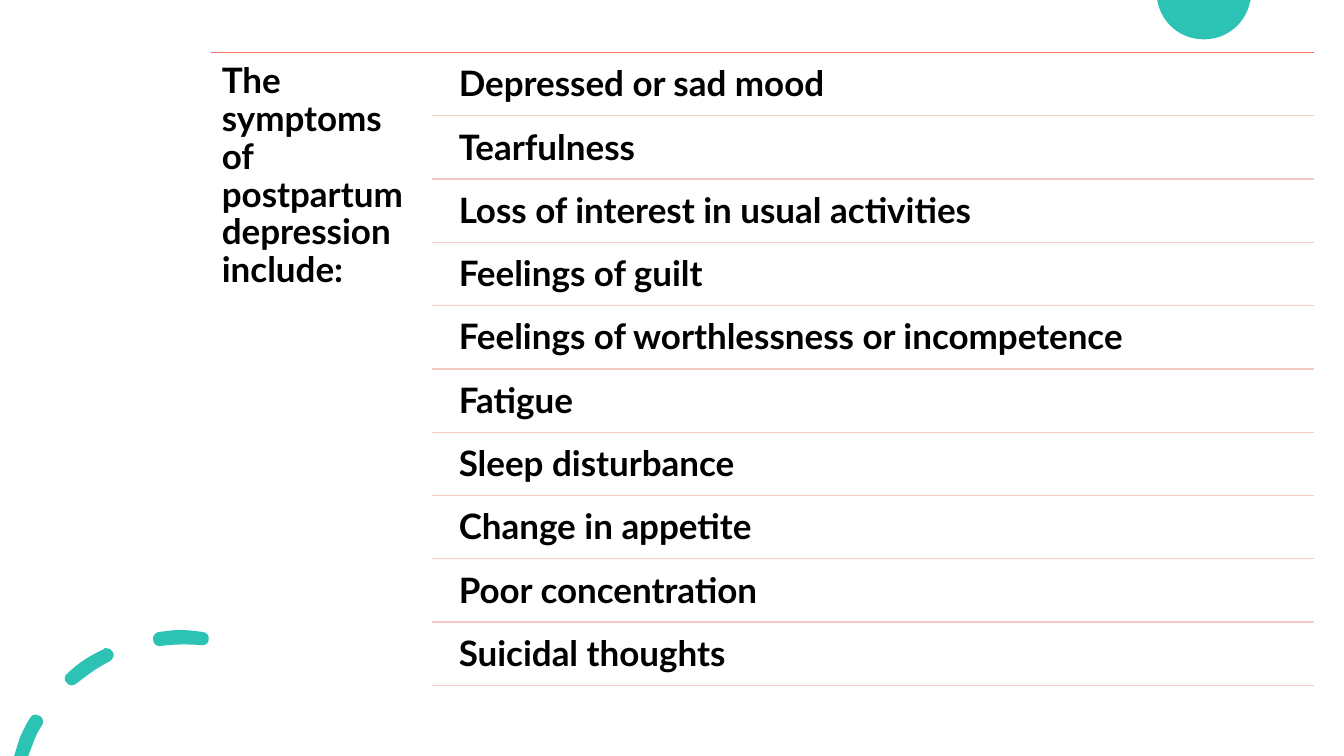
from lxml.etree import SubElement
from pptx import Presentation
from pptx.dml.color import RGBColor
from pptx.enum.shapes import MSO_CONNECTOR
from pptx.enum.text import MSO_ANCHOR
from pptx.oxml.ns import qn
from pptx.util import Inches, Pt

# Content
TITLE = "The symptoms of postpartum depression include:"
SIGNS = [
    "Depressed or sad mood",
    "Tearfulness",
    "Loss of interest in usual activities",
    "Feelings of guilt",
    "Feelings of worthlessness or incompetence",
    "Fatigue",
    "Sleep disturbance",
    "Change in appetite",
    "Poor concentration",
    "Suicidal thoughts",
]
TEAL, CORAL, PINK, BLACK = "2CC3B4", "EE7661", "F7CAC5", "000000"

# Outlines: a start point, then segments of one point (line) or three (curve)
DISC = [
    [(11.48, 0), (12.41, 0), (12.4, .01), (12.36, .23, 12.17, .39, 11.94, .39),
     (11.71, .39, 11.52, .23, 11.48, .01)],
]
DASHES = [
    [(.36, 7.09), (.34, 7.08, .31, 7.1, .3, 7.12),
     (.26, 7.18, .23, 7.25, .2, 7.31), (.14, 7.5), (.28, 7.5), (.33, 7.37),
     (.35, 7.31, .38, 7.25, .42, 7.19), (.44, 7.16, .42, 7.11, .39, 7.1),
     (.38, 7.09, .37, 7.09, .36, 7.09)],
    [(1.05, 6.43), (1.04, 6.43, 1.03, 6.43, 1.03, 6.44),
     (.9, 6.5, .77, 6.58, .67, 6.68), (.64, 6.7, .63, 6.75, .66, 6.77),
     (.67, 6.79, .69, 6.8, .71, 6.8), (.73, 6.8, .74, 6.79, .76, 6.78),
     (.86, 6.7, .97, 6.62, 1.09, 6.56), (1.12, 6.54, 1.14, 6.5, 1.12, 6.47),
     (1.11, 6.44, 1.08, 6.43, 1.05, 6.43)],
    [(1.79, 6.25), (1.72, 6.25, 1.65, 6.26, 1.58, 6.27),
     (1.54, 6.27, 1.51, 6.31, 1.52, 6.35), (1.52, 6.38, 1.55, 6.41, 1.58, 6.41),
     (1.73, 6.39, 1.86, 6.39, 1.99, 6.4), (2.03, 6.41, 2.07, 6.38, 2.07, 6.35),
     (2.08, 6.31, 2.05, 6.27, 2.01, 6.27), (1.94, 6.26, 1.86, 6.25, 1.79, 6.25)],
]

# Grid, in inches
LEFT, RIGHT, TOP, END = 2.09, 13.03, .52, 6.8
RULE, TEXT = 4.28, 4.44
ROW = (END - TOP) / len(SIGNS)
GAP, INSET = .03, .11

deck = Presentation()
deck.slide_width, deck.slide_height = Inches(13.33), Inches(7.5)
slide = deck.slides.add_slide(deck.slide_layouts[6])
shapes = slide.shapes


def paint(color, code):
    color.rgb = RGBColor.from_string(code)


def blob(loops):
    # Straight outline through the end points
    pen = None
    for start, *parts in loops:
        x, y = map(Inches, start)
        if pen is None:
            pen = shapes.build_freeform(x, y, scale=1.0)
        else:
            pen.move_to(x, y)
        ends = [tuple(map(Inches, part[-2:])) for part in parts]
        pen.add_line_segments(ends, close=True)
    shape = pen.convert_to_shape()

    # Bend the segments that have control points
    sides = list(shape._element.iter(qn("a:lnTo")))
    parts = [part for loop in loops for part in loop[1:]]
    for side, part in zip(sides, parts):
        if len(part) == 6:
            side.tag = qn("a:cubicBezTo")
            side.clear()
            for x, y in zip(part[::2], part[1::2]):
                SubElement(side, qn("a:pt"), x=str(Inches(x) - shape.left),
                           y=str(Inches(y) - shape.top))

    shape.shadow.inherit = False
    shape.fill.solid()
    paint(shape.fill.fore_color, TEAL)
    shape.line.fill.background()


def rule(x, y, code):
    line = shapes.add_connector(MSO_CONNECTOR.STRAIGHT, Inches(x), Inches(y),
                                Inches(RIGHT), Inches(y))
    line.line.width = Pt(1)
    paint(line.line.color, code)
    SubElement(line._element.spPr, qn("a:effectLst"))


def label(x, y, wide, high, words):
    box = shapes.add_textbox(Inches(x), Inches(y), Inches(wide), Inches(high))
    frame = box.text_frame
    frame.word_wrap = True
    frame.vertical_anchor = MSO_ANCHOR.TOP
    frame.margin_left = frame.margin_right = Inches(INSET)
    frame.margin_top = frame.margin_bottom = Inches(INSET)
    para = frame.paragraphs[0]
    para.line_spacing = .9
    run = para.add_run()
    run.text = words
    run.font.name, run.font.size, run.font.bold = "Lato", Pt(25), True
    paint(run.font.color, BLACK)


# Corner ornaments
blob(DISC)
blob(DASHES)

# Heading column
rule(LEFT, TOP, CORAL)
label(LEFT, TOP, RULE - LEFT, END - TOP, TITLE)

# Symptom rows
for row, sign in enumerate(SIGNS):
    y = TOP + row * ROW
    label(TEXT, y + GAP, RIGHT - TEXT, ROW - GAP, sign)
    rule(RULE, y + ROW, PINK)

deck.save("out.pptx")
